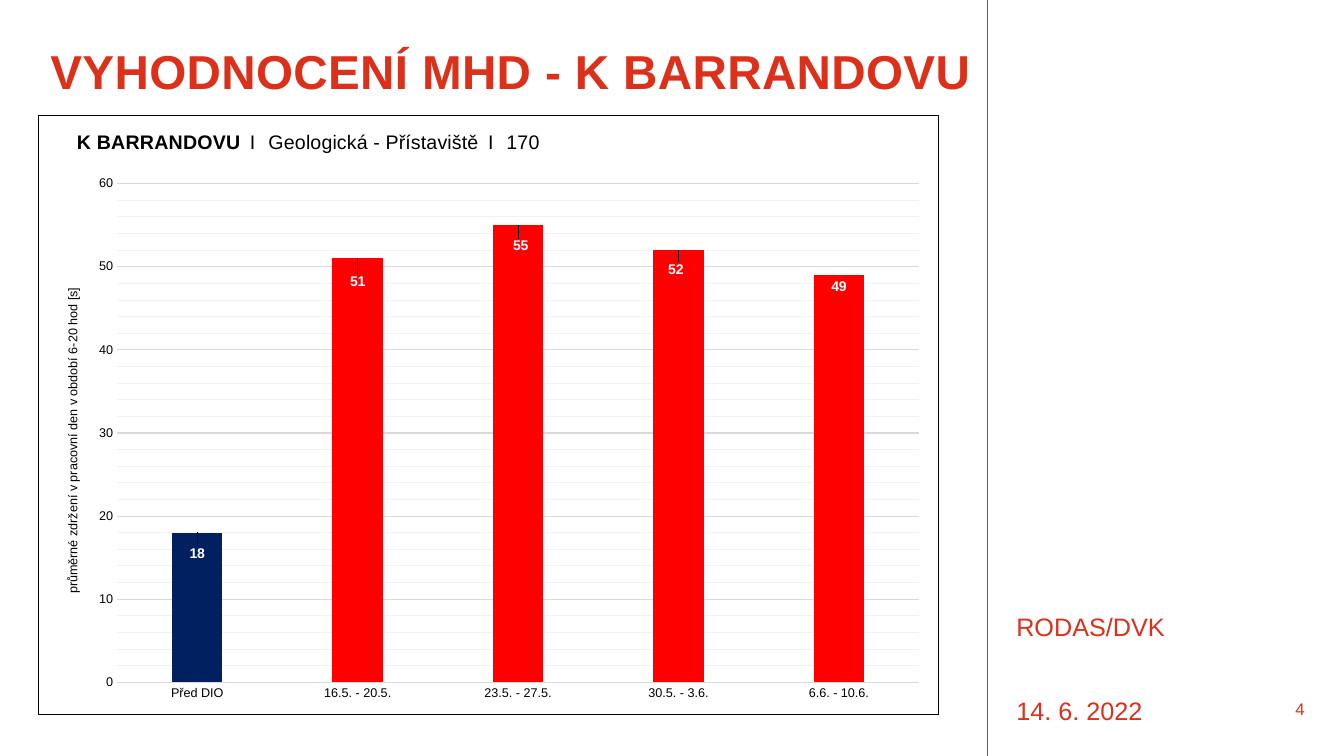
"""Build the slide with the delay chart for K Barrandovu."""
from lxml import etree
from pptx import Presentation, util as u
from pptx.chart.data import CategoryChartData
from pptx.dml.color import RGBColor
from pptx.enum import chart as ch, shapes, text
from pptx.oxml import parse_xml
from pptx.oxml.ns import nsdecls, qn

RED = RGBColor(0xDC, 0x30, 0x1B)
BAR = RGBColor(0xFF, 0x00, 0x00)
NAVY = RGBColor(0x00, 0x20, 0x60)
BLACK = RGBColor(0, 0, 0)
WHITE = RGBColor(0xFF, 0xFF, 0xFF)
GRID = RGBColor(0xD9, 0xD9, 0xD9)
MINOR = RGBColor(0xF2, 0xF2, 0xF2)


class Deck:
    font = "Arial"

    def __init__(self, prs):
        self.s = prs.slides.add_slide(prs.slide_layouts[0])

    def style(self, font, size, color, bold=False):
        font.name, font.size, font.bold = self.font, u.Pt(size), bold
        font.color.rgb = color

    def run(self, p, words, size, color, bold=False, spacing=0):
        r = p.add_run()
        r.text = words
        self.style(r.font, size, color, bold)
        if spacing:
            r.font._element.set("spc", str(spacing))

    def fill_text(self, sp, box, words, size, anchor, bold=False,
                  align=text.PP_ALIGN.LEFT, line=1.0, spacing=0, bottom=0):
        sp.left, sp.top, sp.width, sp.height = map(u.Inches, box)
        tf = sp.text_frame
        tf.word_wrap, tf.auto_size = True, text.MSO_AUTO_SIZE.NONE
        tf.vertical_anchor = anchor
        tf.margin_left = tf.margin_right = tf.margin_top = 0
        tf.margin_bottom = u.Inches(bottom)
        p = tf.paragraphs[0]
        p.alignment, p.line_spacing, p.space_before = align, line, u.Pt(0)
        self.run(p, words, size, RED, bold, spacing)

    def text_box(self, box, *args, **kwargs):
        sp = self.s.shapes.add_textbox(*map(u.Inches, box))
        self.fill_text(sp, box, *args, **kwargs)

    def rule(self, x, height):
        sp = self.s.shapes.add_connector(
            shapes.MSO_CONNECTOR.STRAIGHT,
            u.Inches(x), 0, u.Inches(x), u.Inches(height))
        sp.line.color.rgb, sp.line.width = RED, u.Pt(0.5)
        etree.SubElement(sp._element.spPr, qn("a:effectLst"))

    def place(self, parent, index, edge=True, inner=False, **fractions):
        for old in parent.findall(qn("c:layout")):
            parent.remove(old)
        layout = etree.Element(qn("c:layout"))
        manual = etree.SubElement(layout, qn("c:manualLayout"))
        if inner:
            etree.SubElement(manual, qn("c:layoutTarget")).set("val", "inner")
        if edge:
            for mode in ("xMode", "yMode"):
                etree.SubElement(manual, qn("c:" + mode)).set("val", "edge")
        for key, value in fractions.items():
            etree.SubElement(manual, qn("c:" + key)).set("val", str(value))
        parent.insert(index, layout)

    def chart(self, box, categories, values, title, axis_label, offsets):
        data = CategoryChartData()
        data.categories = categories
        data.add_series("Series 1", values)
        chart = self.s.shapes.add_chart(
            ch.XL_CHART_TYPE.COLUMN_CLUSTERED, *map(u.Inches, box), data).chart
        self.style(chart.font, 9, BLACK)
        chart.has_legend = False
        self.frame(chart)
        self.heading(chart, title)
        self.axes(chart, axis_label)
        self.bars(chart.plots[0], offsets)
        self.place(chart.element.find(".//" + qn("c:plotArea")), 0,
                   inner=True, x=0.087, y=0.114, w=0.892, h=0.833)

    def frame(self, chart):
        chart.element.find(qn("c:chart")).addnext(parse_xml(
            f'<c:spPr {nsdecls("c", "a")}>'
            f'<a:solidFill><a:srgbClr val="{WHITE}"/></a:solidFill>'
            f'<a:ln w="9525"><a:solidFill><a:srgbClr val="{BLACK}"/>'
            '</a:solidFill></a:ln></c:spPr>'))

    def heading(self, chart, runs):
        chart.has_title = True
        title = chart.chart_title
        p = title.text_frame.paragraphs[0]
        for words, bold, spacing in runs:
            self.run(p, words, 14, BLACK, bold, spacing)
        self.place(title._element, 1, x=0.039, y=0.019)

    def axes(self, chart, label):
        cat, val = chart.category_axis, chart.value_axis
        for axis in (cat, val):
            axis.major_tick_mark = axis.minor_tick_mark = ch.XL_TICK_MARK.NONE
            self.style(axis.tick_labels.font, 9, BLACK)
        cat.format.line.color.rgb, cat.format.line.width = GRID, u.Pt(0.75)
        val.format.line.fill.background()
        val.minimum_scale, val.maximum_scale = 0, 60
        val.major_unit, val.minor_unit = 10, 2
        self.grid(val)
        title = val.axis_title
        self.run(title.text_frame.paragraphs[0], label, 9, BLACK)
        body = title._element.find(".//" + qn("a:bodyPr"))
        body.set("rot", "-5400000")
        body.set("vert", "horz")
        self.place(title._element, 1, x=0.026, y=0.284)

    def grid(self, axis):
        axis.has_major_gridlines = True
        line = axis.major_gridlines.format.line
        line.color.rgb, line.width = GRID, u.Pt(0.75)
        axis._element.find(qn("c:majorGridlines")).addnext(parse_xml(
            f'<c:minorGridlines {nsdecls("c", "a")}><c:spPr><a:ln w="9525">'
            f'<a:solidFill><a:srgbClr val="{MINOR}"/></a:solidFill>'
            '</a:ln></c:spPr></c:minorGridlines>'))

    def bars(self, plot, offsets):
        plot.gap_width, plot.vary_by_categories = 219, False
        series = plot.series[0]
        series.format.fill.solid()
        series.format.fill.fore_color.rgb = BAR
        first = series.points[0].format.fill
        first.solid()
        first.fore_color.rgb = NAVY
        labels = series.data_labels
        labels.show_value = True
        labels.position = ch.XL_LABEL_POSITION.INSIDE_END
        self.style(labels.font, 10, WHITE, True)
        for i in range(len(offsets)):
            label = series.points[i].data_label
            self.style(label.font, 10, WHITE, True)
            label.position = ch.XL_LABEL_POSITION.INSIDE_END
        for (x, y), item in zip(offsets, labels._element.findall(qn("c:dLbl"))):
            self.place(item, 1, edge=False, x=x, y=y)


def main():
    prs = Presentation()
    prs.slide_width, prs.slide_height = u.Inches(13.33), u.Inches(7.5)
    deck = Deck(prs)
    title, subtitle = deck.s.placeholders
    middle, bottom = text.MSO_ANCHOR.MIDDLE, text.MSO_ANCHOR.BOTTOM
    deck.rule(9.79, 7.5)
    deck.fill_text(title, (0.5, 0.45, 9.22, 0.58),
                   "VYHODNOCENÍ MHD - K BARRANDOVU", 34, middle,
                   bold=True, line=0.85, spacing=30)
    deck.fill_text(subtitle, (10.08, 5.7, 2.86, 0.74), "RODAS/DVK", 18,
                   bottom, line=0.9, bottom=0.07)
    deck.text_box((10.08, 6.59, 2.07, 0.61), "14. 6. 2022", 18, bottom)
    deck.text_box((12.27, 6.83, 0.67, 0.4), "4", 12, middle,
                  align=text.PP_ALIGN.RIGHT)
    deck.chart(
        (0.38, 1.14, 8.93, 5.95),
        ["Před DIO", "16.5. - 20.5.", "23.5. - 27.5.", "30.5. - 3.6.",
         "6.6. - 10.6."],
        [18, 51, 55, 52, 49],
        [("K BARRANDOVU", True, 0), (" I ", False, 260),
         ("Geologická - Přístaviště", False, 0), (" I ", False, 260),
         ("170", False, 0)],
        "průměrné zdržení v pracovní den v období 6-20 hod [s]",
        [(0, 0.015), (0, 0.02), (0.003, 0.015), (-0.003, 0.013)])
    prs.save("out.pptx")


if __name__ == "__main__":
    main()
